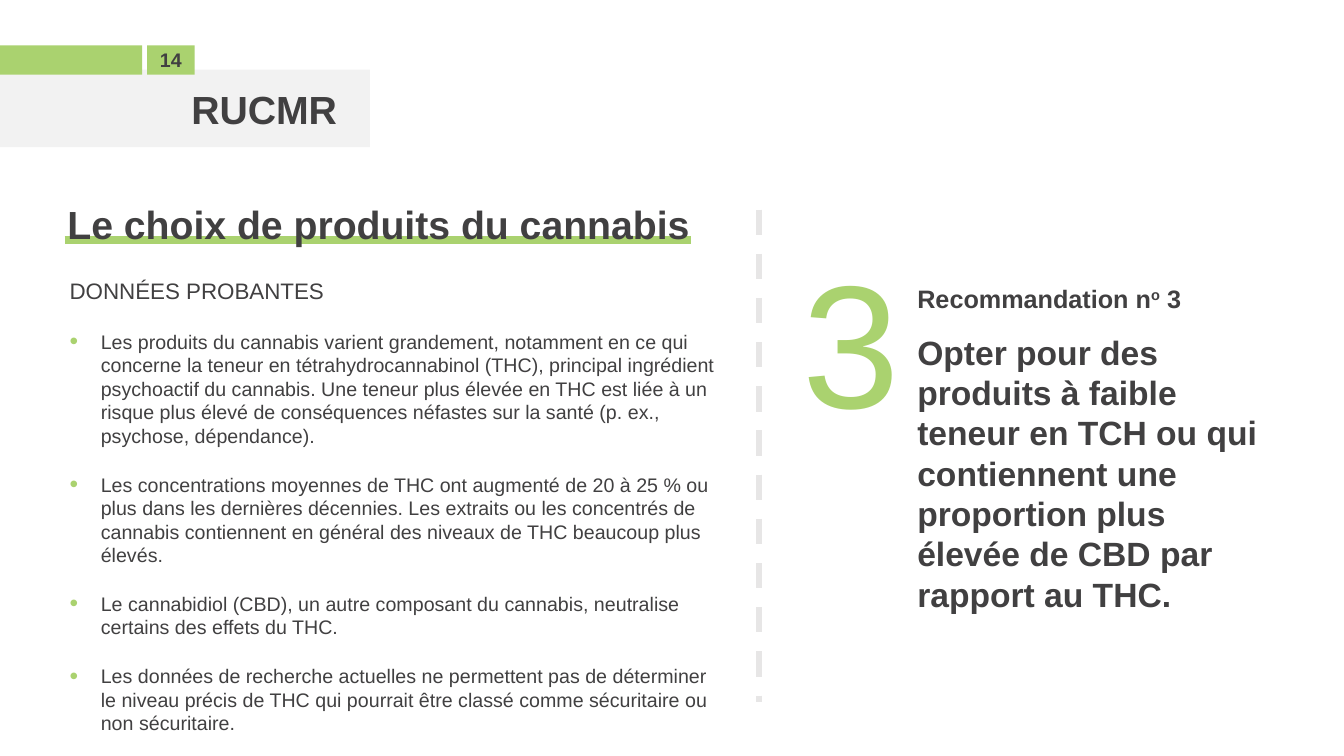
import pptx
import pptx.util
import pptx.dml.color
import pptx.enum.dml
import pptx.enum.shapes
import pptx.enum.text
import pptx.oxml.ns
import lxml.etree

Inches = pptx.util.Inches
Pt = pptx.util.Pt
ALIGN = pptx.enum.text.PP_ALIGN
ANCHOR = pptx.enum.text.MSO_ANCHOR


class Theme:
    font = "Arial"
    text, green, panel, rule = "414041", "AAD26F", "F2F2F2", "E7E6E6"
    small, label, lead, advice, title, numeral = 14, 16, 18, 24, 28, 125


def rgb(value):
    return pptx.dml.color.RGBColor.from_string(value)


def sub(parent, tag, **attrs):
    return lxml.etree.SubElement(parent, pptx.oxml.ns.qn(tag), attrs)


class SlideBuilder:
    def __init__(self, slide, theme):
        self.s, self.theme = slide, theme

    def bar(self, x, y, w, h, color):
        sp = self.s.shapes.add_shape(
            pptx.enum.shapes.MSO_SHAPE.RECTANGLE, *map(Inches, (x, y, w, h)))
        sp.shadow.inherit = False
        sp.fill.solid()
        sp.fill.fore_color.rgb = rgb(color)
        sp.line.fill.background()

    def line(self, x1, y1, x2, y2, color, width, dash=None):
        sp = self.s.shapes.add_connector(
            pptx.enum.shapes.MSO_CONNECTOR.STRAIGHT,
            *map(Inches, (x1, y1, x2, y2)))
        sp.line.color.rgb = rgb(color)
        sp.line.width = Pt(width)
        if dash:
            sp.line.dash_style = dash
        sub(sp._element.spPr, "a:effectLst")

    def box(self, x, y, w, h, anchor=ANCHOR.TOP, inset=True):
        sp = self.s.shapes.add_textbox(*map(Inches, (x, y, w, h)))
        tf = sp.text_frame
        formats = {"word_wrap": True, "vertical_anchor": anchor}
        if not inset:
            for side in ("left", "top", "right", "bottom"):
                formats["margin_" + side] = 0
        for name, value in formats.items():
            setattr(tf, name, value)
        return tf

    def paragraph(self, tf, text, size, color=None, bold=False, **formats):
        p = tf.paragraphs[0]
        if p.runs:
            p = tf.add_paragraph()
        for name, value in formats.items():
            setattr(p, name, value)
        self.run(p, text, size, color, bold)
        return p

    def run(self, p, text, size, color=None, bold=False, raised=False):
        r = p.add_run()
        r.text = text
        formats = {"name": self.theme.font, "size": Pt(size), "bold": bold}
        for name, value in formats.items():
            setattr(r.font, name, value)
        r.font.color.rgb = rgb(color or self.theme.text)
        if raised:
            r.font._element.set("baseline", "30000")

    def bullets(self, tf, items, size):
        indent = Inches(0.31)
        for item in items:
            p = self.paragraph(tf, item, size, space_before=Pt(18))
            pPr = p._p.get_or_add_pPr()
            pPr.set("marL", str(indent))
            pPr.set("indent", str(-indent))
            sub(sub(pPr, "a:buClr"), "a:srgbClr", val=self.theme.green)
            sub(pPr, "a:buSzPct", val="125000")
            sub(pPr, "a:buFont", typeface=self.theme.font)
            sub(pPr, "a:buChar", char="•")


EVIDENCE = [
    "Les produits du cannabis varient grandement, notamment en ce qui "
    "concerne la teneur en tétrahydrocannabinol (THC), principal ingrédient "
    "psychoactif du cannabis. Une teneur plus élevée en THC est liée à un "
    "risque plus élevé de conséquences néfastes sur la santé (p. ex., "
    "psychose, dépendance).",
    "Les concentrations moyennes de THC ont augmenté de 20 à 25 % ou plus "
    "dans les dernières décennies. Les extraits ou les concentrés de cannabis "
    "contiennent en général des niveaux de THC beaucoup plus élevés.",
    "Le cannabidiol (CBD), un autre composant du cannabis, neutralise "
    "certains des effets du THC.",
    "Les données de recherche actuelles ne permettent pas de déterminer le "
    "niveau précis de THC qui pourrait être classé comme sécuritaire ou non "
    "sécuritaire.",
]
ADVICE = ("Opter pour des produits à faible teneur en TCH ou qui contiennent "
          "une proportion plus élevée de CBD par rapport au THC.")


def main():
    prs = pptx.Presentation()
    prs.slide_width, prs.slide_height = Inches(13.33), Inches(7.5)
    th = Theme()
    b = SlideBuilder(prs.slides.add_slide(prs.slide_layouts[6]), th)

    # Header band and page number
    b.bar(0, 0.69, 3.67, 0.77, th.panel)
    tf = b.box(0.22, 0.79, 3.22, 0.57, ANCHOR.MIDDLE)
    b.paragraph(tf, "RUCMR", th.title, bold=True, alignment=ALIGN.RIGHT)
    for x, w in ((0, 1.41), (1.46, 0.47)):
        b.bar(x, 0.45, w, 0.29, th.green)
    tf = b.box(1.46, 0.43, 0.47, 0.34)
    b.paragraph(tf, "14", th.small, bold=True, alignment=ALIGN.CENTER)

    # Underlined title
    b.line(0.64, 2.38, 6.85, 2.38, th.green, 6)
    tf = b.box(0.57, 1.94, 6.68, 0.57)
    b.paragraph(tf, "Le choix de produits du cannabis", th.title, bold=True)

    # Evidence
    tf = b.box(0.69, 2.75, 5.49, 0.27, inset=False)
    b.paragraph(tf, "DONNÉES PROBANTES", th.label)
    tf = b.box(0.69, 3.27, 6.48, 3.73, inset=False)
    b.bullets(tf, EVIDENCE, th.small)

    # Divider
    b.line(7.53, 2.08, 7.53, 6.96, th.rule, 4.5,
           pptx.enum.dml.MSO_LINE.DASH)

    # Recommendation
    tf = b.box(7.86, 2.27, 1.55, 2.2)
    b.paragraph(tf, "3", th.numeral, th.green)
    tf = b.box(9, 2.05, 3.7, 4.8, ANCHOR.MIDDLE)
    p = b.paragraph(tf, "Recommandation n", th.lead, bold=True)
    b.run(p, "o", th.lead, bold=True, raised=True)
    b.run(p, " 3", th.lead, bold=True)
    b.paragraph(tf, ADVICE, th.advice, bold=True, space_before=Pt(13))

    prs.save("out.pptx")


if __name__ == "__main__":
    main()
